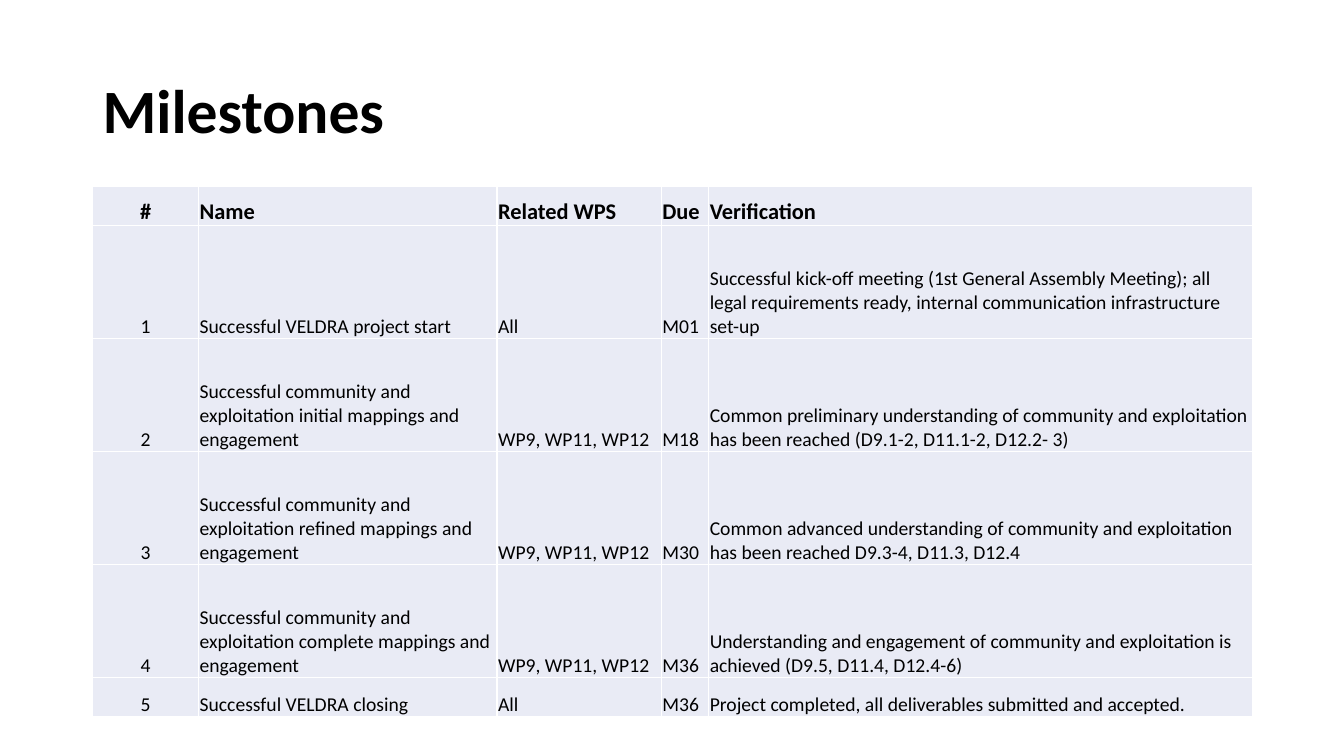
from lxml import etree
from pptx import Presentation
from pptx import util as u
from pptx.dml.color import RGBColor
from pptx.enum import text
from pptx.oxml.ns import qn

TITLE = "Milestones"
HEADER = ("#", "Name", "Related WPS", "Due", "Verification")
MILESTONES = [
    ("Successful VELDRA project start", "All", "M01",
     "Successful kick-off meeting (1st General Assembly Meeting); all legal requirements ready, "
     "internal communication infrastructure set-up"),
    ("Successful community and exploitation initial mappings and engagement", "WP9, WP11, WP12", "M18",
     "Common preliminary understanding of community and exploitation has been reached "
     "(D9.1-2, D11.1-2, D12.2- 3)"),
    ("Successful community and exploitation refined mappings and engagement", "WP9, WP11, WP12", "M30",
     "Common advanced understanding of community and exploitation has been reached "
     "D9.3-4, D11.3, D12.4"),
    ("Successful community and exploitation complete mappings and engagement", "WP9, WP11, WP12", "M36",
     "Understanding and engagement of community and exploitation is achieved "
     "(D9.5, D11.4, D12.4-6)"),
    ("Successful VELDRA closing", "All", "M36",
     "Project completed, all deliverables submitted and accepted."),
]
COLORS = {"ink": "000000", "cell": "E9EBF5", "border": "FFFFFF"}
FONT = "Calibri"
WIDTH, HEIGHT = 13.33, 7.5
LEFT, TITLE_TOP, TITLE_HEIGHT = 0.92, 0.4, 1.45
COLUMNS = (1.05, 2.96, 1.63, 0.47, 5.39)
SHORT_ROW, TALL_ROW = 0.39, 1.12
ROWS = [SHORT_ROW] + [TALL_ROW] * (len(MILESTONES) - 1) + [SHORT_ROW]


def write(tf, content, size, bold=False, align=text.PP_ALIGN.LEFT, spacing=1.0):
    tf.word_wrap = True
    p = tf.paragraphs[0]
    p.alignment, p.line_spacing = align, spacing
    r = p.add_run()
    r.text = content
    r.font.name, r.font.size, r.font.bold = FONT, u.Pt(size), bold
    r.font.color.rgb = RGBColor.from_string(COLORS["ink"])


def style_cell(cell):
    tc_pr = cell._tc.get_or_add_tcPr()
    for side in ("lnL", "lnR", "lnT", "lnB"):
        line = etree.SubElement(tc_pr, qn(f"a:{side}"), w=str(u.Pt(1)))
        fill = etree.SubElement(line, qn("a:solidFill"))
        etree.SubElement(fill, qn("a:srgbClr"), val=COLORS["border"])
    cell.fill.solid()
    cell.fill.fore_color.rgb = RGBColor.from_string(COLORS["cell"])
    cell.vertical_anchor = text.MSO_ANCHOR.BOTTOM
    cell.margin_left = cell.margin_right = cell.margin_top = u.Inches(0.01)
    cell.margin_bottom = 0


def add_title(s):
    box = s.shapes.add_textbox(*map(u.Inches, (LEFT, TITLE_TOP, sum(COLUMNS), TITLE_HEIGHT)))
    box.text_frame.vertical_anchor = text.MSO_ANCHOR.MIDDLE
    write(box.text_frame, TITLE, 44, bold=True, spacing=0.9)


def add_milestones(s):
    place = (LEFT, TITLE_TOP + TITLE_HEIGHT, sum(COLUMNS), sum(ROWS))
    table = s.shapes.add_table(len(ROWS), len(COLUMNS), *map(u.Inches, place)).table
    table.horz_banding = False
    for column, width in zip(table.columns, COLUMNS):
        column.width = u.Inches(width)
    for row, height in zip(table.rows, ROWS):
        row.height = u.Inches(height)
    records = [HEADER] + [(str(n), *m) for n, m in enumerate(MILESTONES, 1)]
    for i, record in enumerate(records):
        for j, content in enumerate(record):
            cell = table.cell(i, j)
            style_cell(cell)
            write(cell.text_frame, content, 16 if i == 0 else 14, bold=i == 0,
                  align=text.PP_ALIGN.CENTER if j == 0 else text.PP_ALIGN.LEFT)


def main():
    prs = Presentation()
    prs.slide_width, prs.slide_height = u.Inches(WIDTH), u.Inches(HEIGHT)
    s = prs.slides.add_slide(prs.slide_layouts[6])
    add_title(s)
    add_milestones(s)
    prs.save("out.pptx")


if __name__ == "__main__":
    main()
